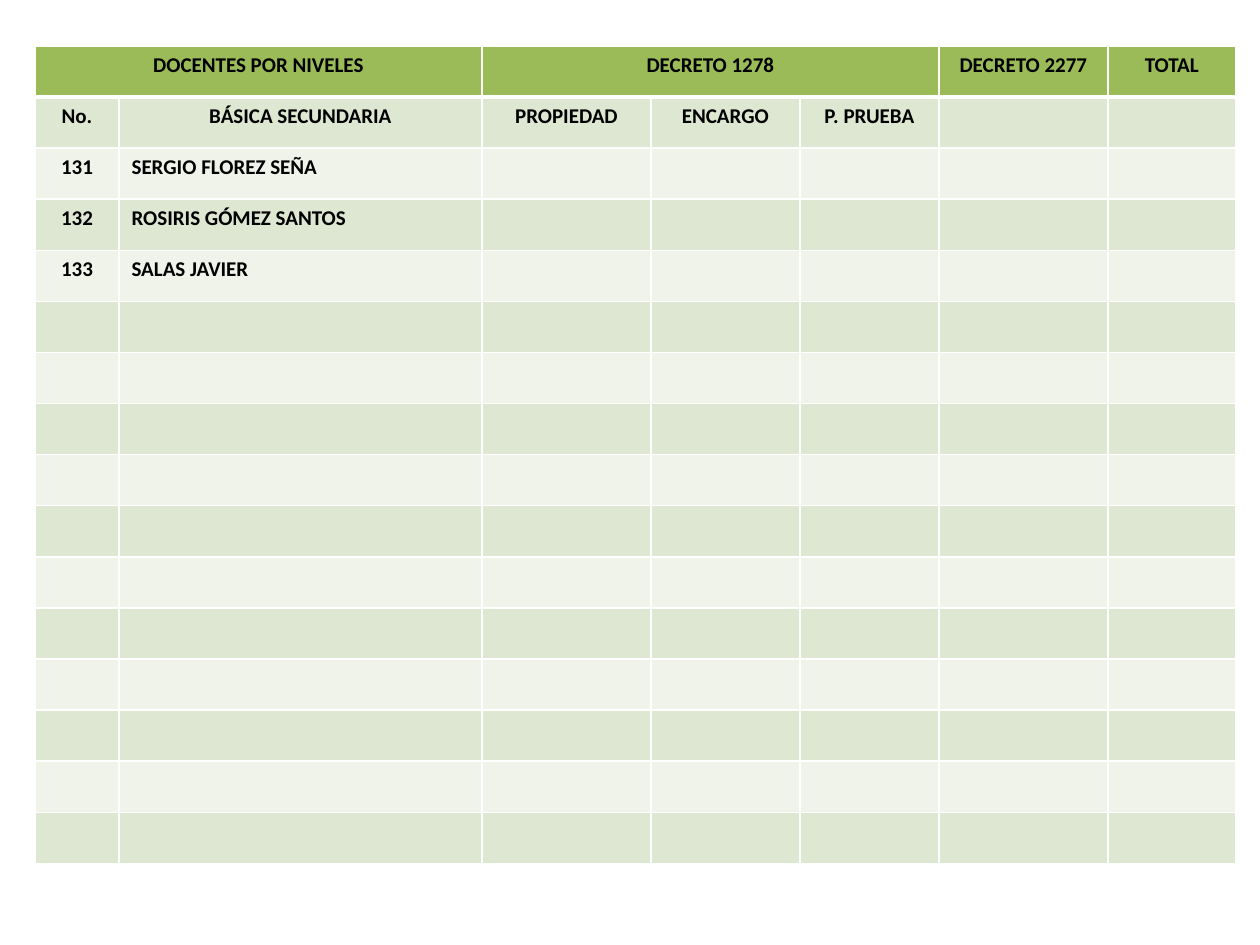
from dataclasses import dataclass

from lxml import etree
from pptx import Presentation
from pptx import util as u
from pptx.dml.color import RGBColor
from pptx.enum import text
from pptx.oxml.ns import qn

PX = 914400 // 126


@dataclass(frozen=True)
class Theme:
    font: str = "Calibri"
    size: int = 12
    ink: str = "000000"
    rule: str = "FFFFFF"
    header: str = "9BBB59"
    bands: tuple = ("EFF3EA", "DEE7D1")
    thin: int = 1
    thick: int = 3


THEME = Theme()
COLUMNS = [84, 363, 169, 149, 139, 169, 128]
ROW_COUNT, ROW_HEIGHT = 16, 51
HEADER_SPANS = [(0, 1), (2, 4)]
ROWS = [
    ["DOCENTES POR NIVELES", "", "DECRETO 1278", "", "", "DECRETO 2277", "TOTAL"],
    ["No.", "BÁSICA SECUNDARIA", "PROPIEDAD", "ENCARGO", "P. PRUEBA"],
    ["131", "SERGIO FLOREZ SEÑA"],
    ["132", "ROSIRIS GÓMEZ SANTOS"],
    ["133", "SALAS JAVIER"],
]


def write(cell, words, align=text.PP_ALIGN.CENTER, bold=True):
    paragraph = cell.text_frame.paragraphs[0]
    paragraph.alignment = align
    run = paragraph.add_run()
    run.text = words
    run.font.name = THEME.font
    run.font.size = u.Pt(THEME.size)
    run.font.bold = bold
    run.font.color.rgb = RGBColor.from_string(THEME.ink)


def paint(cell, color, bottom=THEME.thin):
    """Give a cell its four rules and its fill."""
    properties = cell._tc.get_or_add_tcPr()
    for side in "LRTB":
        width = bottom if side == "B" else THEME.thin
        line = etree.SubElement(properties, qn(f"a:ln{side}"), w=str(u.Pt(width)))
        solid = etree.SubElement(line, qn("a:solidFill"))
        etree.SubElement(solid, qn("a:srgbClr"), val=THEME.rule)
    cell.fill.solid()
    cell.fill.fore_color.rgb = RGBColor.from_string(color)


def add_teacher_table(slide, left, top):
    table = slide.shapes.add_table(
        ROW_COUNT, len(COLUMNS), left * PX, top * PX,
        sum(COLUMNS) * PX, ROW_COUNT * ROW_HEIGHT * PX).table
    for column, width in zip(table.columns, COLUMNS):
        column.width = width * PX
    for first, last in HEADER_SPANS:
        table.cell(0, first).merge(table.cell(0, last))

    for r, row in enumerate(table.rows):
        row.height = ROW_HEIGHT * PX
        for cell in row.cells:
            if r == 0:
                paint(cell, THEME.header, bottom=THEME.thick)
            else:
                paint(cell, THEME.bands[r % 2])

    for r, labels in enumerate(ROWS):
        for c, label in enumerate(labels):
            is_name = r > 1 and c == 1
            align = text.PP_ALIGN.JUSTIFY if is_name else text.PP_ALIGN.CENTER
            if label:
                write(table.cell(r, c), label, align=align)


def main():
    deck = Presentation()
    deck.slide_width, deck.slide_height = u.Inches(10), u.Inches(7.5)
    slide = deck.slides.add_slide(deck.slide_layouts[6])
    add_teacher_table(slide, left=35, top=46)
    deck.save("out.pptx")


if __name__ == "__main__":
    main()
